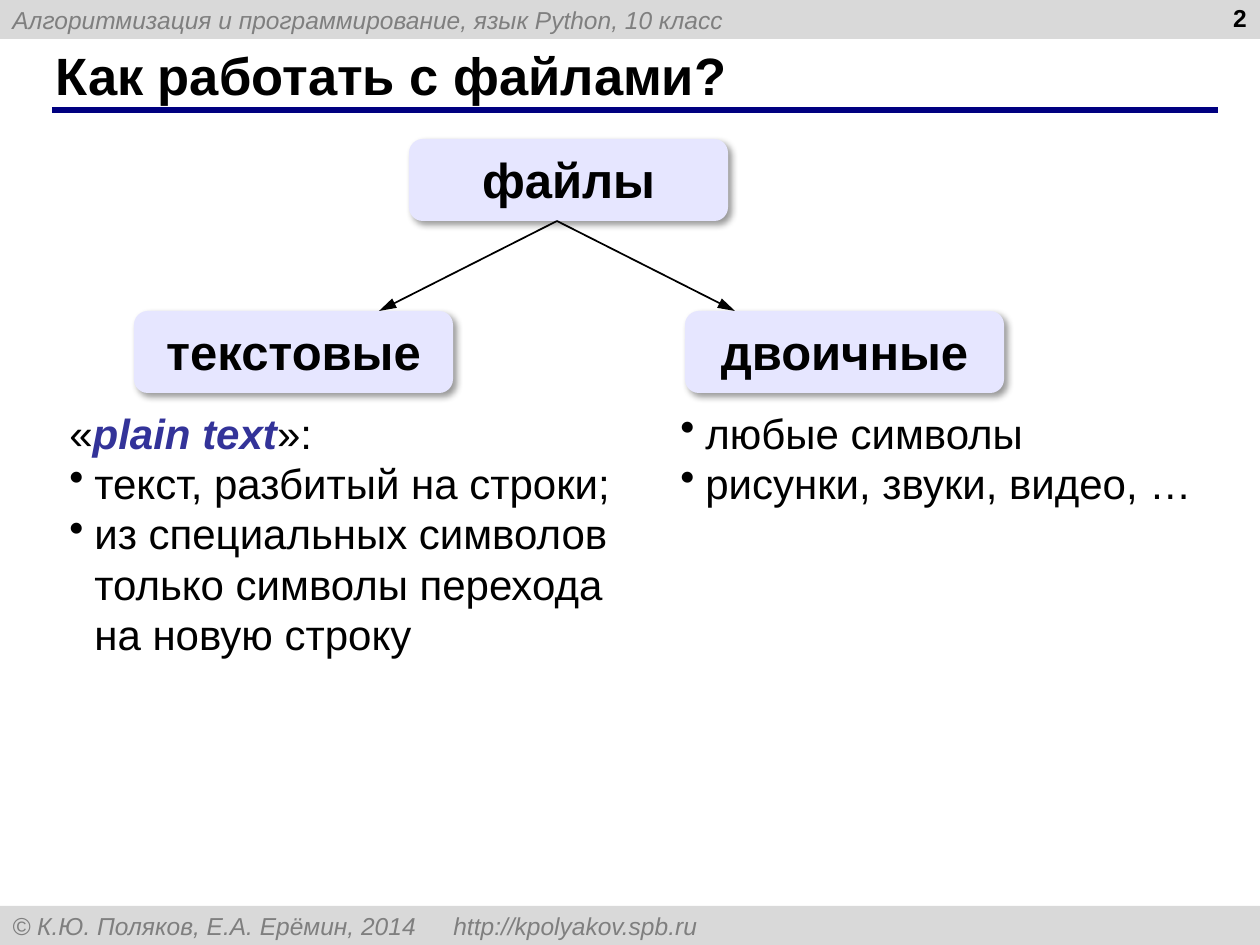
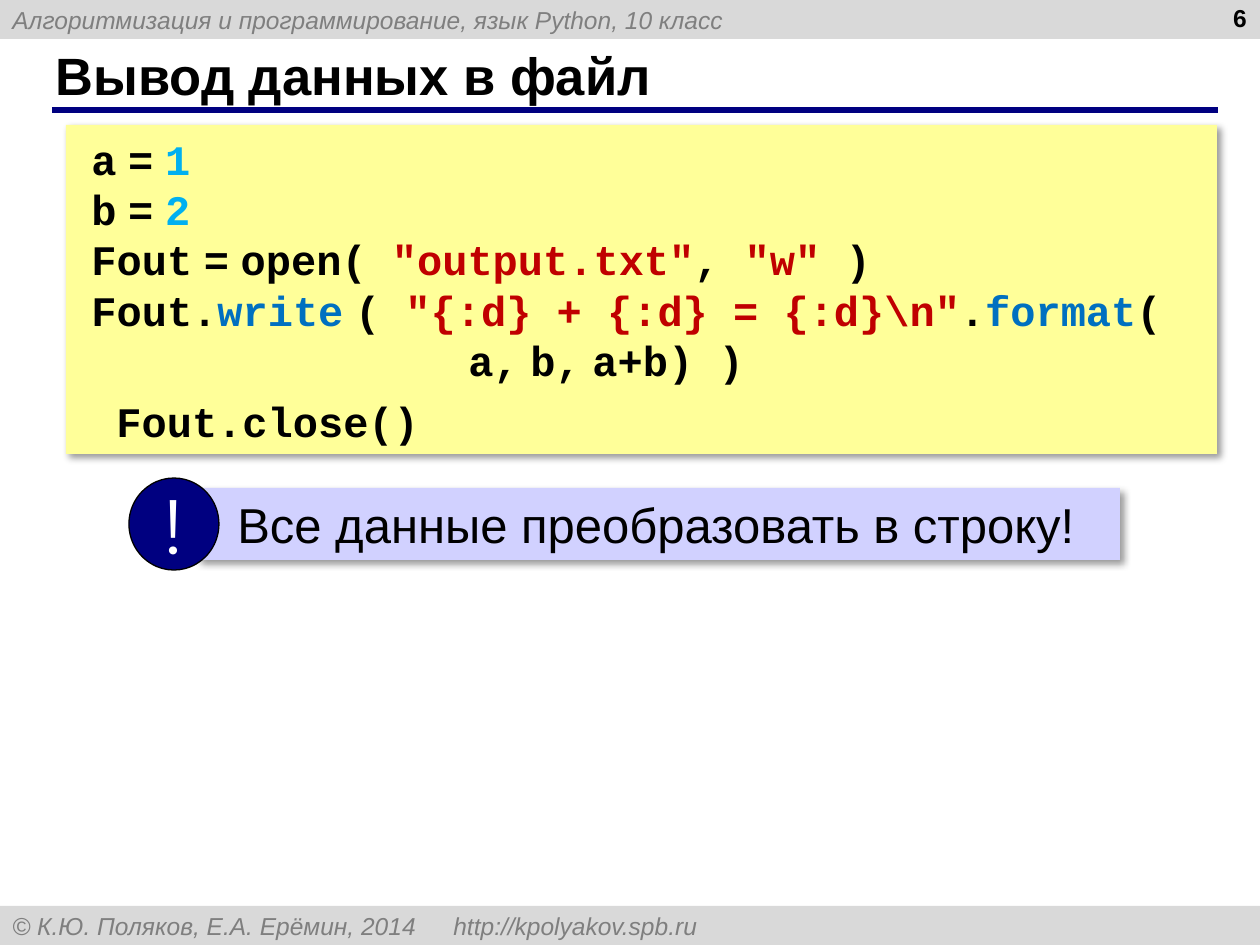
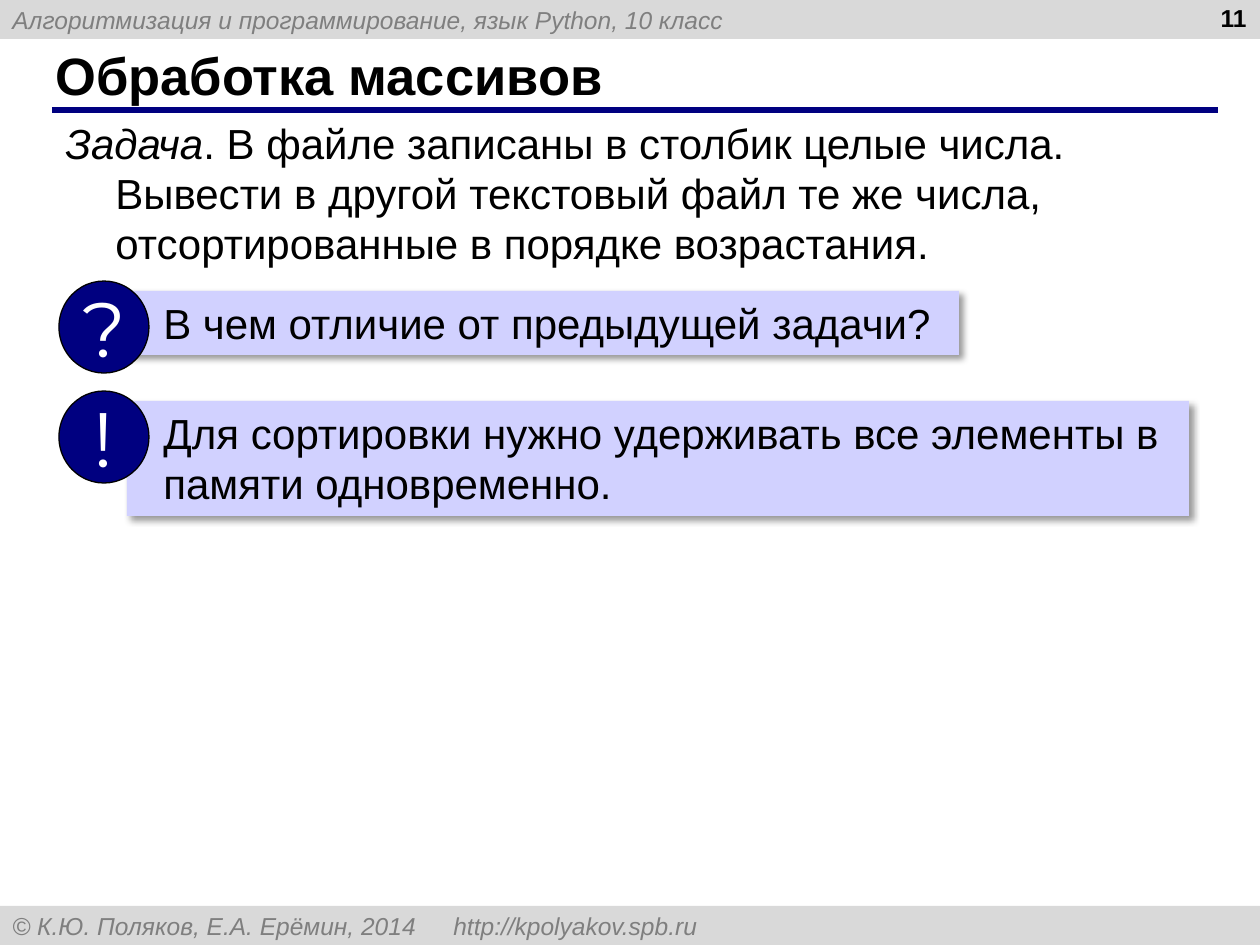
from collections import namedtuple

from lxml.etree import SubElement
from pptx import Presentation
from pptx.dml.color import RGBColor
from pptx.enum.shapes import MSO_CONNECTOR, MSO_SHAPE
from pptx.enum.text import MSO_ANCHOR, PP_ALIGN
from pptx.oxml.ns import qn
from pptx.util import Pt

EMU_PER_PX = 914400 / 126
SLIDE_WIDTH, SLIDE_HEIGHT = 1260, 945
BAND_HEIGHT = 39

BODY_FONT = "Arial"
CODE_FONT = "Courier New"
BADGE_FONT = "Montserrat"

BLACK = RGBColor(0x00, 0x00, 0x00)
WHITE = RGBColor(0xFF, 0xFF, 0xFF)
BAND_GRAY = RGBColor(0xD9, 0xD9, 0xD9)
BAND_TEXT = RGBColor(0x7F, 0x7F, 0x7F)
NAVY = RGBColor(0x00, 0x00, 0x80)
NODE_LILAC = RGBColor(0xE6, 0xE6, 0xFF)
CALLOUT_LILAC = RGBColor(0xD1, 0xD1, 0xFF)
CODE_YELLOW = RGBColor(0xFF, 0xFF, 0x99)
TERM_BLUE = RGBColor(0x33, 0x33, 0x99)
NUMBER_CYAN = RGBColor(0x00, 0xB0, 0xF0)
STRING_RED = RGBColor(0xC0, 0x00, 0x00)
METHOD_BLUE = RGBColor(0x00, 0x70, 0xC0)

Box = namedtuple("Box", "left top width height")


def px(length):
    return round(length * EMU_PER_PX)


def place(box):
    return [px(length) for length in box]


def write(shape, text, first=False, font=BODY_FONT, size=24, color=BLACK, bold=False,
          italic=False, align=PP_ALIGN.LEFT, margin=0, indent=0, bullet=False,
          tab=None, before=0):
    frame = shape.text_frame
    paragraph = frame.paragraphs[0] if first else frame.add_paragraph()
    paragraph.alignment = align
    paragraph.space_before = Pt(before)
    properties = paragraph._p.get_or_add_pPr()
    properties.set("marL", str(px(margin)))
    properties.set("indent", str(px(indent)))
    if bullet:
        SubElement(properties, qn("a:buChar"), char="•")
    if tab:
        tabs = SubElement(properties, qn("a:tabLst"))
        SubElement(tabs, qn("a:tab"), pos=str(px(tab)), algn="r")
    base = dict(font=font, size=size, color=color, bold=bold, italic=italic)
    for words, changes in [(text, {})] if isinstance(text, str) else text:
        style = {**base, **changes}
        run = paragraph.add_run()
        run.text = words
        run.font.name = style["font"]
        run.font.size = Pt(style["size"])
        run.font.color.rgb = style["color"]
        run.font.bold = style["bold"]
        run.font.italic = style["italic"]


def add_text_box(slide, box):
    text_box = slide.shapes.add_textbox(*place(box))
    text_box.text_frame.word_wrap = True
    return text_box


def add_panel(slide, kind, box, fill=None, line=None, shadow=False, anchor=MSO_ANCHOR.TOP):
    shape = slide.shapes.add_shape(kind, *place(box))
    shape.shadow.inherit = False
    if fill is None:
        shape.fill.background()
    else:
        shape.fill.solid()
        shape.fill.fore_color.rgb = fill
    if line is None:
        shape.line.fill.background()
    else:
        shape.line.color.rgb = line
        shape.line.width = Pt(0.75)
    if shadow:
        effects = shape._element.spPr.find(qn("a:effectLst"))
        outer = SubElement(effects, qn("a:outerShdw"), blurRad=str(Pt(4)), dist=str(Pt(3)),
                           dir="2700000", algn="tl", rotWithShape="0")
        color = SubElement(outer, qn("a:srgbClr"), val=str(BLACK))
        SubElement(color, qn("a:alpha"), val="40000")
    shape.text_frame.word_wrap = True
    shape.text_frame.vertical_anchor = anchor
    return shape


def add_line(slide, start, end, color, width, arrow=False):
    connector = slide.shapes.add_connector(MSO_CONNECTOR.STRAIGHT, *place(start + end))
    connector.line.color.rgb = color
    connector.line.width = Pt(width)
    if arrow:
        SubElement(connector.line._get_or_add_ln(), qn("a:tailEnd"),
                   type="triangle", w="med", len="lg")
    SubElement(connector._element.spPr, qn("a:effectLst"))


def add_band(slide, top, text, **text_format):
    band = add_panel(slide, MSO_SHAPE.RECTANGLE, Box(0, top, SLIDE_WIDTH, BAND_HEIGHT),
                     fill=BAND_GRAY, anchor=MSO_ANCHOR.MIDDLE)
    write(band, text, first=True, size=14, color=BAND_TEXT, italic=True, **text_format)


def add_lesson_slide(presentation, title, number):
    slide = presentation.slides.add_slide(presentation.slide_layouts[6])
    add_band(slide, 0, "Алгоритмизация и программирование, язык Python, 10 класс")
    add_band(slide, SLIDE_HEIGHT - BAND_HEIGHT,
             "© К.Ю. Поляков, Е.А. Ерёмин, 2014 \thttp://kpolyakov.spb.ru", tab=1223)
    add_line(slide, (52, 110), (1218, 110), NAVY, 3)
    heading = add_text_box(slide, Box(43, 42, 1154, 66))
    heading.text_frame.vertical_anchor = MSO_ANCHOR.MIDDLE
    write(heading, title, first=True, size=30, bold=True)
    page = add_text_box(slide, Box(965, -3, 294, 66))
    write(page, str(number), first=True, size=14, bold=True, align=PP_ALIGN.RIGHT)
    return slide


def add_node(slide, left, top, label):
    node = add_panel(slide, MSO_SHAPE.ROUNDED_RECTANGLE, Box(left, top, 319, 82),
                     fill=NODE_LILAC, shadow=True)
    write(node, label, first=True, size=28, bold=True, align=PP_ALIGN.CENTER)


def add_list(slide, box, items, heading=None):
    panel = add_panel(slide, MSO_SHAPE.FLOWCHART_PROCESS, box)
    if heading:
        write(panel, heading, first=True)
    for index, item in enumerate(items):
        write(panel, item, first=index == 0 and not heading,
              margin=25, indent=-25, bullet=True)


def add_file_tree(slide, box):
    child_step, child_top, list_top = 551, 172, 262
    first_child = box.left + 77
    add_node(slide, first_child + child_step // 2, box.top, "файлы")
    for index, label in enumerate(("текстовые", "двоичные")):
        add_node(slide, first_child + index * child_step, box.top + child_top, label)
    list_height = box.height - list_top
    add_list(slide, Box(box.left, box.top + list_top, 577, list_height),
             ["текст, разбитый на строки;",
              "из специальных символов только символы перехода на новую строку"],
             heading=[("«", {}),
                      ("plain text", dict(color=TERM_BLUE, bold=True, italic=True)),
                      ("»:", {})])
    add_list(slide, Box(box.left + 611, box.top + list_top, 578, list_height),
             ["любые символы", "рисунки, звуки, видео, …"])
    fork = (box.left + 500, box.top + 82)
    for reach in (-178, 178):
        add_line(slide, fork, (fork[0] + reach, box.top + child_top), BLACK, 1, arrow=True)


def add_code(slide, box):
    panel = add_panel(slide, MSO_SHAPE.RECTANGLE, box, fill=CODE_YELLOW, shadow=True,
                      anchor=MSO_ANCHOR.MIDDLE)
    gap = (" ", dict(font=BODY_FONT))
    number, string, method = (dict(color=color)
                              for color in (NUMBER_CYAN, STRING_RED, METHOD_BLUE))
    lines = [
        (13, 0, [("a", {}), gap, ("=", {}), gap, ("1", number)]),
        (13, 0, [("b", {}), gap, ("=", {}), gap, ("2", number)]),
        (13, 0, [("Fout", {}), gap, ("=", {}), gap, ("open( ", {}),
                 ('"output.txt"', string), (", ", {}), ('"w" ', string), (")", {})]),
        (13, 0, [("Fout.", {}), ("write", method), gap, ("( ", {}),
                 ('"{:d} + {:d} = {:d}\\n"', string), (".", {}),
                 ("format", method), ("(", {})]),
        (390, 0, [("a,", {}), gap, ("b,", {}), gap, ("a+b) )", {})]),
        (38, 6, "Fout.close()"),
    ]
    for index, (margin, before, text) in enumerate(lines):
        write(panel, text, first=index == 0, font=CODE_FONT, bold=True,
              margin=margin, before=before)


def add_callout(slide, box, sign, text, size=24):
    inset_left, inset_top = 68, 10
    panel = add_panel(slide, MSO_SHAPE.RECTANGLE,
                      Box(box.left + inset_left, box.top + inset_top,
                          box.width - inset_left, box.height - inset_top),
                      fill=CALLOUT_LILAC, shadow=True)
    write(panel, text, first=True, size=size, margin=size)
    badge = add_panel(slide, MSO_SHAPE.OVAL, Box(box.left, box.top, 90, 92),
                      fill=NAVY, line=BLACK, anchor=MSO_ANCHOR.MIDDLE)
    badge.text_frame.word_wrap = False
    write(badge, sign, first=True, font=BADGE_FONT, size=44, color=WHITE,
          align=PP_ALIGN.CENTER)


def add_task(slide, box):
    task = add_text_box(slide, box)
    write(task, [("Задача", dict(italic=True)),
                 (". В файле записаны в столбик целые числа. Вывести в другой текстовый "
                  "файл те же числа, отсортированные в порядке возрастания.", {})],
          first=True, margin=50, indent=-50)


def main():
    presentation = Presentation()
    presentation.slide_width = px(SLIDE_WIDTH)
    presentation.slide_height = px(SLIDE_HEIGHT)

    files_slide = add_lesson_slide(presentation, "Как работать с файлами?", 2)
    add_file_tree(files_slide, Box(57, 139, 1189, 540))

    output_slide = add_lesson_slide(presentation, "Вывод данных в файл", 6)
    add_code(output_slide, Box(66, 125, 1151, 329))
    add_callout(output_slide, Box(129, 478, 991, 82), "!",
                "Все данные преобразовать в строку!", size=28)

    arrays_slide = add_lesson_slide(presentation, "Обработка массивов", 11)
    add_task(arrays_slide, Box(53, 111, 1167, 165))
    add_callout(arrays_slide, Box(59, 281, 900, 74), "?",
                "В чем отличие от предыдущей задачи?")
    add_callout(arrays_slide, Box(59, 391, 1130, 125), "!",
                "Для сортировки нужно удерживать все элементы в памяти одновременно.")

    presentation.save("out.pptx")


if __name__ == "__main__":
    main()
